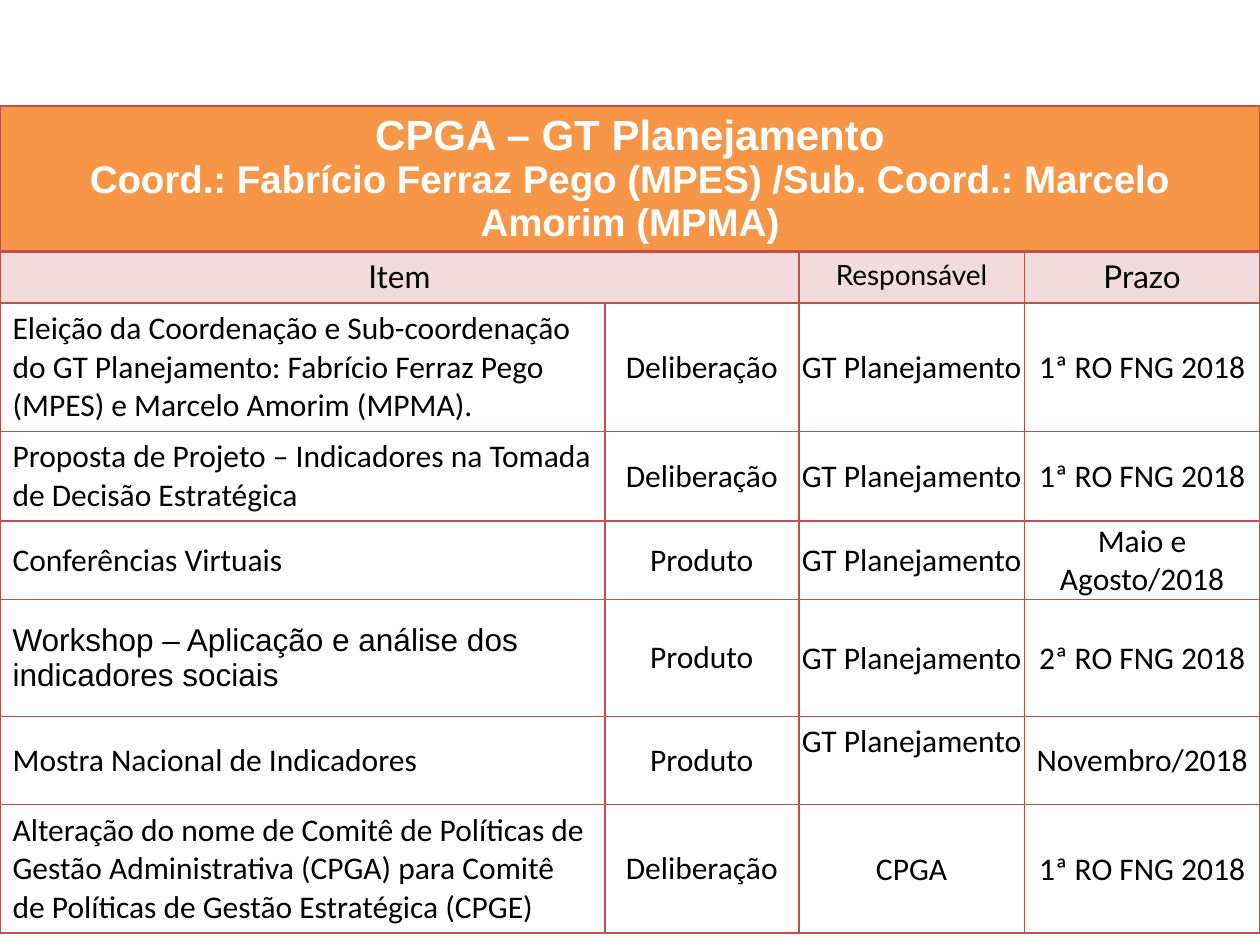
from dataclasses import dataclass
from typing import NamedTuple

from lxml import etree
from pptx import Presentation
from pptx import util as u
from pptx.dml.color import RGBColor
from pptx.enum import text
from pptx.oxml.ns import qn


@dataclass(frozen=True)
class Theme:
    banner: str = "F79646"
    header: str = "F2DCDB"
    line: str = "C0504D"
    light: str = "FFFFFF"
    dark: str = "000000"
    heading: str = "Arial"
    label: str = "Lato"
    body: str = "Calibri"
    title_pt: int = 24
    subtitle_pt: int = 22
    body_pt: int = 18
    small_pt: int = 16


class Line(NamedTuple):
    words: str
    font: str
    size: int
    color: str
    bold: bool = False


class Item(NamedTuple):
    subject: str
    kind: str
    owner: str
    due: str
    height: float
    font: str
    owner_anchor: text.MSO_ANCHOR = text.MSO_ANCHOR.MIDDLE


class Inset(NamedTuple):
    left: float
    top: float
    right: float
    bottom: float


T = Theme()
WIDTH, HEIGHT = 10, 7.5
TABLE_TOP = 0.84
COLUMN_SHARES = (0.48, 0.154, 0.179, 0.187)
BANNER_HEIGHT, HEADER_HEIGHT = 1.15, 0.41
ROOMY = Inset(0.1, 0.05, 0.1, 0.05)
TIGHT = Inset(0.01, 0.01, 0.01, 0)
TOP, MIDDLE = text.MSO_ANCHOR.TOP, text.MSO_ANCHOR.MIDDLE
LEFT, CENTER = text.PP_ALIGN.LEFT, text.PP_ALIGN.CENTER

BANNER = [
    Line("CPGA – GT Planejamento", T.heading, T.title_pt, T.light, True),
    Line("Coord.: Fabrício Ferraz Pego (MPES) /Sub. Coord.: Marcelo Amorim (MPMA)",
         T.heading, T.subtitle_pt, T.light, True),
]
HEADERS = {0: ("Item", T.body_pt), 2: ("Responsável", T.small_pt), 3: ("Prazo", T.body_pt)}
ITEMS = [
    Item("Eleição da Coordenação e Sub-coordenação do GT Planejamento: "
         "Fabrício Ferraz Pego (MPES) e Marcelo Amorim (MPMA).",
         "Deliberação", "GT Planejamento", "1ª RO FNG 2018", 1.02, T.body),
    Item("Proposta de Projeto – Indicadores na Tomada de Decisão Estratégica",
         "Deliberação", "GT Planejamento", "1ª RO FNG 2018", 0.7, T.body),
    Item("Conferências Virtuais",
         "Produto", "GT Planejamento", "Maio e Agosto/2018", 0.62, T.body),
    Item("Workshop – Aplicação e análise dos indicadores sociais",
         "Produto", "GT Planejamento", "2ª RO FNG 2018", 0.93, T.heading),
    Item("Mostra Nacional de Indicadores",
         "Produto", "GT Planejamento", "Novembro/2018", 0.7, T.body, TOP),
    Item("Alteração do nome de Comitê de Políticas de Gestão Administrativa (CPGA) "
         "para Comitê de Políticas de Gestão Estratégica (CPGE)",
         "Deliberação", "CPGA", "1ª RO FNG 2018", 1.02, T.body),
]


def set_borders(cell, top: float = 1, bottom: float = 1) -> None:
    """Outline a cell; the border elements must precede its fill."""
    pr = cell._tc.get_or_add_tcPr()
    for i, (side, width) in enumerate((("L", 1), ("R", 1), ("T", top), ("B", bottom))):
        ln = etree.Element(qn(f"a:ln{side}"), w=str(u.Pt(width)))
        fill = etree.SubElement(ln, qn("a:solidFill"))
        etree.SubElement(fill, qn("a:srgbClr"), val=T.line)
        pr.insert(i, ln)


def set_fill(cell, color: str | None) -> None:
    if color is None:
        cell.fill.background()
    else:
        cell.fill.solid()
        cell.fill.fore_color.rgb = RGBColor.from_string(color)


def write(cell, lines: list[Line], align=CENTER, anchor=MIDDLE, inset: Inset = ROOMY) -> None:
    cell.vertical_anchor = anchor
    cell.margin_left, cell.margin_top, cell.margin_right, cell.margin_bottom = map(u.Inches, inset)
    tf = cell.text_frame
    for i, line in enumerate(lines):
        p = tf.add_paragraph() if i else tf.paragraphs[0]
        p.alignment = align
        r = p.add_run()
        r.text = line.words
        r.font.name, r.font.size, r.font.bold = line.font, u.Pt(line.size), line.bold
        r.font.color.rgb = RGBColor.from_string(line.color)


def write_item(table, row: int, item: Item) -> None:
    def body(words: str, font: str = T.body) -> list[Line]:
        return [Line(words, font, T.body_pt, T.dark)]

    write(table.cell(row, 0), body(item.subject, item.font), align=LEFT)
    write(table.cell(row, 1), body(item.kind))
    owner_inset = ROOMY._replace(left=0.01, right=0.01) if item.owner_anchor == TOP else TIGHT
    write(table.cell(row, 2), body(item.owner), anchor=item.owner_anchor, inset=owner_inset)
    write(table.cell(row, 3), body(item.due), inset=TIGHT)


def add_plan(s) -> None:
    heights = [BANNER_HEIGHT, HEADER_HEIGHT, *(item.height for item in ITEMS)]
    frame = s.shapes.add_table(len(heights), len(COLUMN_SHARES), 0, u.Inches(TABLE_TOP),
                               u.Inches(WIDTH), u.Inches(sum(heights)))
    table = frame.table
    table.first_row = table.horz_banding = False
    for column, share in zip(table.columns, COLUMN_SHARES):
        column.width = u.Inches(WIDTH * share)
    fills = {0: T.banner, 1: T.header}
    for i, height in enumerate(heights):
        table.rows[i].height = u.Inches(height)
        for cell in table.rows[i].cells:
            set_fill(cell, fills.get(i))
            set_borders(cell, top=2 if i == 1 else 1, bottom=2 if i == 0 else 1)

    table.cell(0, 0).merge(table.cell(0, 3))
    table.cell(1, 0).merge(table.cell(1, 1))
    write(table.cell(0, 0), BANNER, anchor=TOP)
    for column, (words, size) in HEADERS.items():
        write(table.cell(1, column), [Line(words, T.label, size, T.dark)], anchor=TOP)
    for row, item in enumerate(ITEMS, start=2):
        write_item(table, row, item)


def main() -> None:
    prs = Presentation()
    prs.slide_width, prs.slide_height = u.Inches(WIDTH), u.Inches(HEIGHT)
    add_plan(prs.slides.add_slide(prs.slide_layouts[6]))
    prs.save("out.pptx")


if __name__ == "__main__":
    main()
